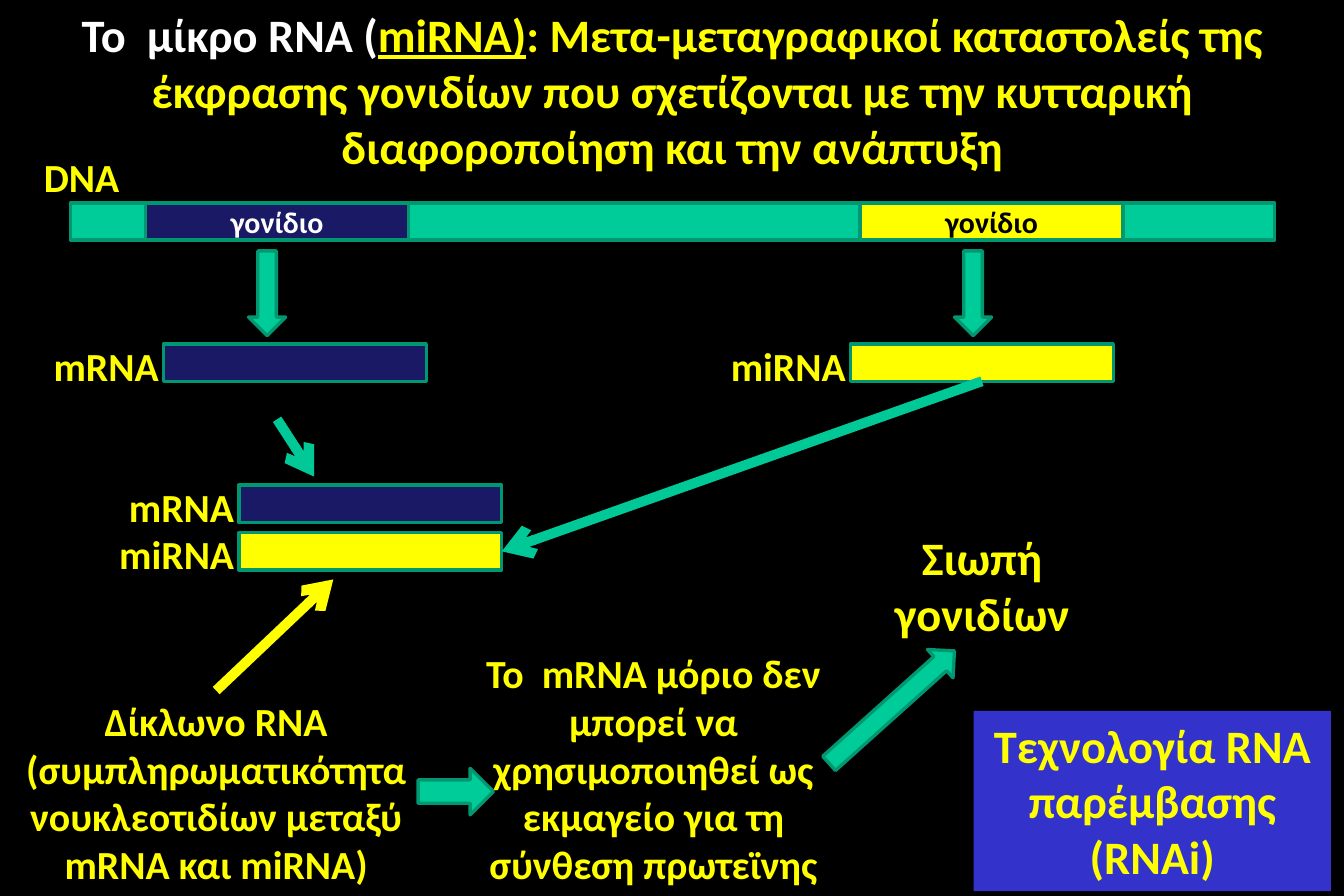
import pptx
import pptx.dml.color
import pptx.enum.shapes
import pptx.enum.text
import pptx.oxml
import pptx.oxml.ns
import pptx.util
from dataclasses import dataclass

Pt = pptx.util.Pt
SHAPE = pptx.enum.shapes.MSO_SHAPE
ANCHOR = pptx.enum.text.MSO_ANCHOR
ALIGN = pptx.enum.text.PP_ALIGN
AUTO_SIZE = pptx.enum.text.MSO_AUTO_SIZE
TOP, BOTTOM, RIGHT = 0, 2, 3


@dataclass(frozen=True)
class Theme:
    font: str = "Calibri"
    background: str = "000000"
    white: str = "FFFFFF"
    black: str = "000000"
    yellow: str = "FFFF00"
    navy: str = "191966"
    green: str = "00CC99"
    outline: str = "009771"
    arrow: str = "00C896"
    blue: str = "3333CC"
    heading: int = 28
    body: int = 24
    gene: int = 18
    border: int = 2
    arrow_width: int = 6


def rgb(value):
    return pptx.dml.color.RGBColor.from_string(value)


class SlideBuilder:
    def __init__(self, slide, theme):
        self.slide = slide
        self.theme = theme
        slide.background.fill.solid()
        slide.background.fill.fore_color.rgb = rgb(theme.background)

    def format_run(self, run, size, color, underline=False):
        run.font.name = self.theme.font
        run.font.size = Pt(size)
        run.font.bold = True
        run.font.underline = underline
        run.font.color.rgb = rgb(color)

    def set_text(self, shape, text, size, color, align=ALIGN.CENTER, anchor=ANCHOR.TOP):
        shape.text_frame.text = text
        shape.text_frame.vertical_anchor = anchor
        paragraph = shape.text_frame.paragraphs[0]
        paragraph.alignment = align
        self.format_run(paragraph.runs[0], size, color)

    def title(self, left, top, width, height, parts):
        """Fill the title from (text, colour, underline) parts."""
        title = self.slide.shapes.title
        title.left, title.top, title.width, title.height = map(Pt, (left, top, width, height))
        frame = title.text_frame
        frame.word_wrap = True
        frame.auto_size = AUTO_SIZE.SHAPE_TO_FIT_TEXT
        frame.vertical_anchor = ANCHOR.TOP
        paragraph = frame.paragraphs[0]
        paragraph.alignment = ALIGN.CENTER
        for text, color, underline in parts:
            run = paragraph.add_run()
            run.text = text
            self.format_run(run, self.theme.heading, color, underline)

    def block(self, kind, left, top, width, height, fill, outlined=True):
        shape = self.slide.shapes.add_shape(kind, Pt(left), Pt(top), Pt(width), Pt(height))
        shape.shadow.inherit = False
        shape.fill.solid()
        shape.fill.fore_color.rgb = rgb(fill)
        if outlined:
            shape.line.color.rgb = rgb(self.theme.outline)
            shape.line.width = Pt(self.theme.border)
        else:
            shape.line.fill.background()
        return shape

    def text(self, left, top, width, height, text, size, wrap=True):
        """Add centred wrapping text, or a one-line label aligned left."""
        box = self.slide.shapes.add_textbox(Pt(left), Pt(top), Pt(width), Pt(height))
        box.text_frame.word_wrap = wrap
        box.text_frame.auto_size = AUTO_SIZE.SHAPE_TO_FIT_TEXT
        align = ALIGN.CENTER if wrap else ALIGN.LEFT
        self.set_text(box, text, size, self.theme.yellow, align)
        return box

    def label(self, left, top, width, text):
        return self.text(left, top, width, 36, text, self.theme.body, wrap=False)

    def arrow(self, start, end, color):
        connector = self.slide.shapes.add_connector(
            pptx.enum.shapes.MSO_CONNECTOR.STRAIGHT, *map(Pt, (*start, *end)))
        connector.line.color.rgb = rgb(color)
        connector.line.width = Pt(self.theme.arrow_width)
        namespace = pptx.oxml.ns.nsdecls("a")
        properties = connector.element.spPr
        properties.find(pptx.oxml.ns.qn("a:ln")).append(
            pptx.oxml.parse_xml(f'<a:tailEnd {namespace} type="arrow"/>'))
        properties.append(pptx.oxml.parse_xml(f"<a:effectLst {namespace}/>"))
        return connector


def main():
    presentation = pptx.Presentation()
    presentation.slide_width, presentation.slide_height = Pt(810), Pt(540)
    theme = Theme()
    slide = presentation.slides.add_slide(presentation.slide_layouts[5])
    builder = SlideBuilder(slide, theme)

    builder.title(25.2, 0, 759.6, 108.7, [
        ("Το  μίκρο RNA (", theme.white, False),
        ("miRNA)", theme.yellow, True),
        (": Μετα-μεταγραφικοί καταστολείς της έκφρασης γονιδίων που σχετίζονται "
         "με την κυτταρική διαφοροποίηση και την ανάπτυξη", theme.yellow, False),
    ])

    strand_width, strand_height = 158.4, 22.4

    def strand(left, top, fill):
        return builder.block(SHAPE.RECTANGLE, left, top, strand_width, strand_height, fill)

    # DNA with its two genes, each transcribed into one RNA
    dna_top, rna_top = 122.4, 207.4
    builder.block(SHAPE.RECTANGLE, 42.4, dna_top, 725.8, strand_height, theme.green)
    builder.label(19.4, 88.6, 60.5, "DNA")
    transcripts = []
    for gene_left, arrow_left, rna_left, fill, color in (
            (87.8, 149.8, 98.6, theme.navy, theme.white),
            (518.4, 575.3, 512.6, theme.yellow, theme.black)):
        gene = strand(gene_left, dna_top, fill)
        builder.set_text(gene, "γονίδιο", theme.gene, color, anchor=ANCHOR.MIDDLE)
        builder.block(SHAPE.DOWN_ARROW, arrow_left, 151.2, 22.4, 51.1, theme.green)
        transcripts.append(strand(rna_left, rna_top, fill))
    builder.label(25.2, 202.4, 78.5, "mRNA")
    builder.label(433.4, 202.4, 84.2, "miRNA")

    # Double-stranded RNA
    duplex_mrna = strand(144, 292.4, theme.navy)
    duplex_mirna = strand(144, 321.1, theme.yellow)
    mirna_label = builder.label(64.8, 315.4, 84.2, "miRNA")
    mrna_label = builder.label(70.6, 287.3, 78.5, "mRNA")
    slide.shapes.add_group_shape([duplex_mrna, duplex_mirna, mirna_label, mrna_label])

    builder.arrow((167, 252.7), (189.4, 287.3), theme.arrow)
    pairing = builder.arrow((591.8, 229.8), (302.4, 332.3), theme.arrow)
    pairing.begin_connect(transcripts[1], BOTTOM)
    pairing.end_connect(duplex_mirna, RIGHT)

    # From pairing to gene silencing
    duplex_note = builder.text(
        0, 416.2, 260.6, 123.8,
        "Δίκλωνο RNA (συμπληρωματικότητα νουκλεοτιδίων μεταξύ mRNA και miRNA)", theme.body)
    pointer = builder.arrow((130.3, 416.2), (200.9, 349.2), theme.yellow)
    pointer.begin_connect(duplex_note, TOP)
    builder.text(
        263.5, 387.4, 260.6, 152.6,
        "To  mRNA μόριο δεν μπορεί να χρησιμοποιηθεί ως εκμαγείο για τη σύνθεση πρωτεϊνης",
        theme.body)
    builder.block(SHAPE.RIGHT_ARROW, 252, 463, 45.4, 28.1, theme.green)
    builder.text(506.9, 315.4, 169.9, 74.9, "Σιωπή γονιδίων", theme.heading)
    silencing = builder.block(SHAPE.RIGHT_ARROW, 486.7, 414.7, 101.5, 23, theme.green)
    silencing.rotation = 318.1

    technology = builder.block(
        SHAPE.RECTANGLE, 586.8, 428.4, 215.3, 108.7, theme.blue, outlined=False)
    technology.text_frame.word_wrap = True
    technology.text_frame.auto_size = AUTO_SIZE.SHAPE_TO_FIT_TEXT
    builder.set_text(technology, "Τεχνολογία RNA παρέμβασης (RNAi)", theme.heading, theme.yellow)

    presentation.save("out.pptx")


if __name__ == "__main__":
    main()
